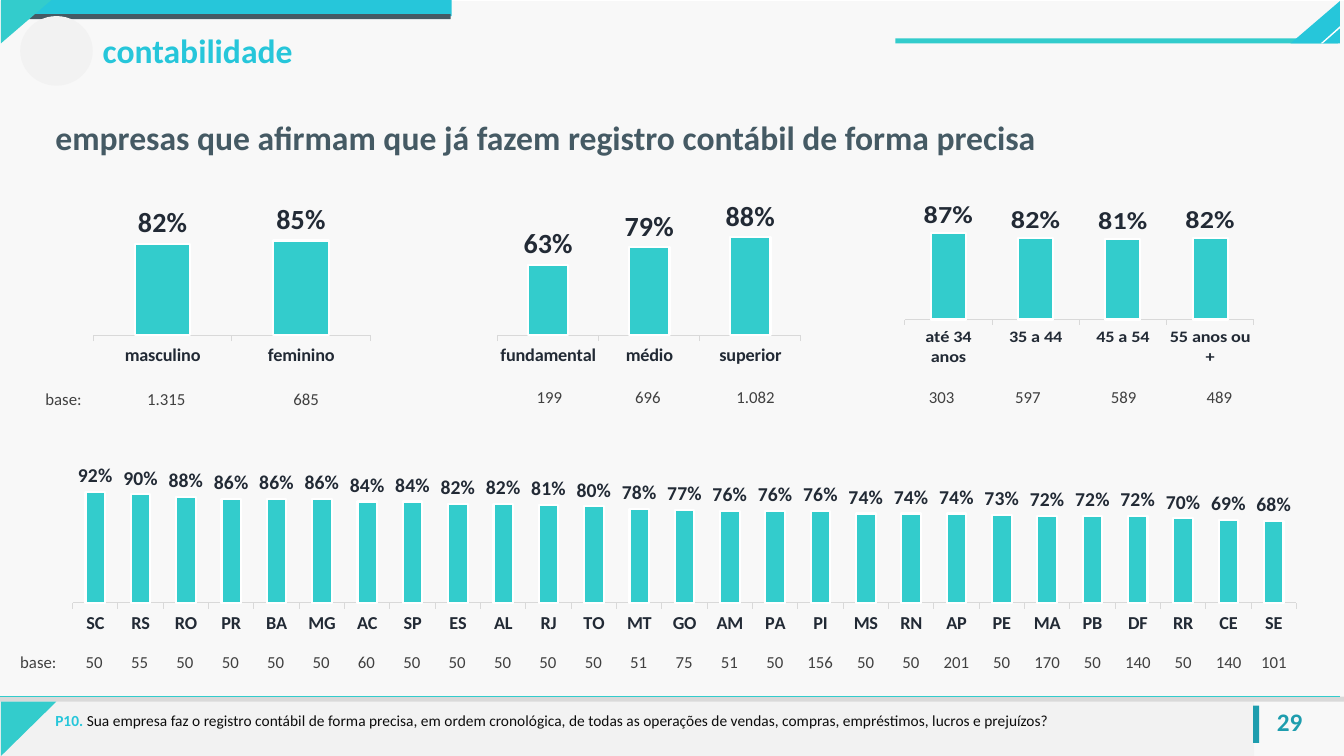
from dataclasses import dataclass

from lxml import etree
from pptx import Presentation
from pptx import util as u
from pptx.chart import data as chart_data
from pptx.dml import color
from pptx.enum import chart as charts
from pptx.enum import dml, shapes, text
from pptx.oxml import ns


@dataclass(frozen=True)
class Theme:
    font: str = "Calibri"
    teal: str = "33CCCC"
    cyan: str = "26C6DA"
    deep_cyan: str = "1E9DAE"
    slate: str = "455A64"
    ink: str = "222A35"
    body: str = "404040"
    black: str = "0D0D0D"
    rule: str = "D9D9D9"
    panel: str = "F2F2F2"
    paper: str = "F8F8F8"
    white: str = "FFFFFF"
    heading_size: int = 24
    number_size: int = 18
    value_size: int = 20
    state_value_size: int = 14
    axis_size: int = 13
    base_size: int = 12
    note_size: int = 11


@dataclass(frozen=True)
class Breakdown:
    categories: list
    percents: list
    bases: list
    widths: list
    base_offset: tuple
    left_aligned: bool = False
    shifted_cell: int = 0


THEME = Theme()
NO_GRID_STYLE = "{2D5ABB26-0587-4C30-8999-92F81FD0307C}"

GENDER = Breakdown(["masculino", "feminino"], [82, 85], ["base:", "1.315", "685"],
                   [0.82, 1.64, 0.64], (-0.47, 1.77), True, 1)
SCHOOLING = Breakdown(["fundamental", "médio", "superior"], [63, 79, 88],
                      ["199", "696", "1.082"], [1.07] * 3, (0, 1.75))
AGE = Breakdown(["até 34 anos", "35 a 44", "45 a 54", "55 anos ou +"], [87, 82, 81, 82],
                ["303", "597", "589", "489"], [0.95] * 4, (-0.07, 1.75))
STATES = [
    ("SC", 92, 50), ("RS", 90, 55), ("RO", 88, 50), ("PR", 86, 50), ("BA", 86, 50),
    ("MG", 86, 50), ("AC", 84, 60), ("SP", 84, 50), ("ES", 82, 50), ("AL", 82, 50),
    ("RJ", 81, 50), ("TO", 80, 50), ("MT", 78, 51), ("GO", 77, 75), ("AM", 76, 51),
    ("PA", 76, 50), ("PI", 76, 156), ("MS", 74, 50), ("RN", 74, 50), ("AP", 74, 201),
    ("PE", 73, 50), ("MA", 72, 170), ("PB", 72, 50), ("DF", 72, 140), ("RR", 70, 50),
    ("CE", 69, 140), ("SE", 68, 101),
]


def rgb(value):
    return color.RGBColor.from_string(value)


def inches(box):
    return [u.Inches(length) for length in box]


def style_font(font, size, shade, bold=False):
    font.name = THEME.font
    font.size = u.Pt(size)
    font.bold = bold
    font.color.rgb = rgb(shade)


def paint(shape, fill):
    shape.shadow.inherit = False
    shape.fill.solid()
    shape.fill.fore_color.rgb = rgb(fill)
    shape.line.fill.background()


def add_block(page, box, fill, kind=shapes.MSO_SHAPE.RECTANGLE):
    block = page.shapes.add_shape(kind, *inches(box))
    paint(block, fill)
    return block


def add_outline(page, points, fill):
    corners = [inches(point) for point in points]
    builder = page.shapes.build_freeform(*corners[0], scale=1.0)
    builder.add_line_segments(corners[1:], close=True)
    paint(builder.convert_to_shape(), fill)


def add_label(page, box, pieces, wrap=True, align=text.PP_ALIGN.LEFT):
    label = page.shapes.add_textbox(*inches(box))
    label.text_frame.word_wrap = wrap
    para = label.text_frame.paragraphs[0]
    para.alignment = align
    for wording, size, shade, bold in pieces:
        span = para.add_run()
        span.text = wording
        style_font(span.font, size, shade, bold)


def place_plot(chart):
    area = chart._chartSpace.chart.plotArea
    for old in area.findall(ns.qn("c:layout")):
        area.remove(old)
    layout = etree.Element(ns.qn("c:layout"))
    manual = etree.SubElement(layout, ns.qn("c:manualLayout"))
    settings = [("layoutTarget", "inner"), ("xMode", "edge"), ("yMode", "edge"),
                ("x", "0.036"), ("y", "0.167"), ("w", "0.928"), ("h", "0.659")]
    for tag, value in settings:
        etree.SubElement(manual, ns.qn("c:" + tag)).set("val", value)
    area.insert(0, layout)


def add_columns(page, box, categories, percents, label_size, gap=150, overlap=0):
    source = chart_data.CategoryChartData(number_format="0%")
    source.categories = categories
    source.add_series("Series 1", [percent / 100 for percent in percents])
    chart = page.shapes.add_chart(charts.XL_CHART_TYPE.COLUMN_CLUSTERED,
                                  *inches(box), source).chart
    chart.has_title = False
    chart.has_legend = False
    style_font(chart.font, 10, THEME.ink)
    place_plot(chart)

    values = chart.value_axis
    values.minimum_scale, values.maximum_scale = 0, 1
    values.has_major_gridlines = False
    values.visible = False
    axis = chart.category_axis
    axis.major_tick_mark = charts.XL_TICK_MARK.OUTSIDE
    axis.format.line.color.rgb = rgb(THEME.rule)
    axis.format.line.width = u.Pt(0.75)
    style_font(axis.tick_labels.font, THEME.axis_size, THEME.ink, True)

    plot = chart.plots[0]
    plot.vary_by_categories = False
    plot.gap_width, plot.overlap = gap, overlap
    plot.has_data_labels = True
    labels = plot.data_labels
    labels.show_value = True
    labels.number_format, labels.number_format_is_linked = "0%", False
    labels.position = charts.XL_LABEL_POSITION.OUTSIDE_END
    style_font(labels.font, label_size, THEME.ink, True)
    bars = plot.series[0].format
    bars.fill.solid()
    bars.fill.fore_color.rgb = rgb(THEME.teal)
    bars.line.color.rgb = rgb(THEME.white)
    bars.line.width = u.Pt(1.5)


def add_base_row(page, left, top, widths, bases):
    frame = page.shapes.add_table(1, len(bases), *inches((left, top, sum(widths), 0.37)))
    table = frame.table
    table.first_row = table.horz_banding = False
    table._tbl.tblPr.find(ns.qn("a:tableStyleId")).text = NO_GRID_STYLE
    for column, width in zip(table.columns, widths):
        column.width = u.Inches(width)
    cells = list(table.rows[0].cells)
    for cell, base in zip(cells, bases):
        cell.fill.background()
        cell.text_frame.text = base
        para = cell.text_frame.paragraphs[0]
        para.line_spacing = 1.5
        para.alignment = text.PP_ALIGN.CENTER
        style_font(para.runs[0].font, THEME.base_size, THEME.body)
    return cells


def breakdown_panel(page, box, group):
    add_columns(page, box, group.categories, group.percents, THEME.value_size)
    dx, dy = group.base_offset
    cells = add_base_row(page, box[0] + dx, box[1] + dy, group.widths, group.bases)
    cells[group.shifted_cell].margin_left = u.Inches(0.29)
    if group.left_aligned:
        for cell in cells:
            cell.text_frame.paragraphs[0].alignment = text.PP_ALIGN.LEFT


def states_panel(page, box):
    names, percents, bases = zip(*STATES)
    add_columns(page, box, names, percents, THEME.state_value_size, 132, 97)
    cells = add_base_row(page, box[0] - 0.15, box[1] + 1.84, [0.61] + [0.45] * len(bases),
                         ["base:"] + [str(base) for base in bases])
    cells[0].text_frame.paragraphs[0].alignment = text.PP_ALIGN.LEFT
    for cell in cells[1:]:
        cell.vertical_anchor = text.MSO_ANCHOR.MIDDLE
        cell.margin_left = cell.margin_right = cell.margin_top = u.Inches(0.01)
        cell.margin_bottom = 0


def header(page, box):
    x, y, width, _ = box
    right = x + width - 0.04
    add_block(page, (x + 0.09, y, 4.39, 0.16), THEME.cyan)
    add_block(page, (x + 0.23, y + 0.14, 4.24, 0.05), THEME.slate)
    add_outline(page, [(x + 0.01, y), (x + 0.51, y), (x + 0.01, y + 0.43)], THEME.teal)
    add_block(page, (right - 4.41, y + 0.38, 4.39, 0.05), THEME.teal)
    add_outline(page, [(right, y + 0.01), (right - 0.49, y + 0.43), (right, y + 0.43)],
                THEME.cyan)
    add_outline(page, [(right, y + 0.28), (right, y + 0.26), (right - 0.19, y + 0.43),
                       (right - 0.17, y + 0.43)], THEME.white)
    add_block(page, (x + 0.2, y + 0.16, 0.72, 0.69), THEME.panel, shapes.MSO_SHAPE.OVAL)
    add_label(page, (x + 0.92, y + 0.25, 5.83, 0.5),
              [("contabilidade", THEME.heading_size, THEME.cyan, True)])


def heading(page, box):
    title = page.shapes.title
    title.left, title.top, title.width, title.height = inches(box)
    frame = title.text_frame
    frame.text = "empresas que afirmam que já fazem registro contábil de forma precisa"
    frame.auto_size = text.MSO_AUTO_SIZE.NONE
    frame.vertical_anchor = text.MSO_ANCHOR.TOP
    para = frame.paragraphs[0]
    para.alignment = text.PP_ALIGN.LEFT
    style_font(para.runs[0].font, THEME.heading_size, THEME.slate, True)


def footer(page, box):
    x, y, width, _ = box
    top, bottom = y + 0.05, y + 0.59
    add_block(page, (x, top, 12.44, 0.54), THEME.panel)
    add_block(page, (x, y, width, 0.05), THEME.rule)
    add_outline(page, [(x + 0.01, top), (x + 0.56, top), (x + 0.01, bottom)], THEME.teal)
    rule = page.shapes.add_connector(shapes.MSO_CONNECTOR.STRAIGHT,
                                     *inches((x, y, x + width - 0.04, y)))
    rule.line.color.rgb = rgb(THEME.teal)
    rule.line.width = u.Pt(0.5)
    etree.SubElement(rule._element.spPr, ns.qn("a:effectLst"))
    add_label(page, (x + 12.48, top, 0.62, 0.4),
              [("29", THEME.number_size, THEME.deep_cyan, True)], False, text.PP_ALIGN.CENTER)
    add_block(page, (x + 12.43, y + 0.09, 0.06, 0.37), THEME.deep_cyan)
    question = ("Sua empresa faz o registro contábil de forma precisa, em ordem cronológica, "
                "de todas as operações de vendas, compras, empréstimos, lucros e prejuízos?")
    add_label(page, (x + 0.45, y + 0.1, 12.01, 0.29),
              [("P10. ", THEME.note_size, THEME.cyan, True),
               (question, THEME.note_size, THEME.black, False)])


def backdrop(page, box):
    paper = add_block(page, box, THEME.paper)
    paper.fill.patterned()
    paper.fill.pattern = dml.MSO_PATTERN.DARK_HORIZONTAL
    paper.fill.fore_color.rgb = rgb(THEME.paper)
    paper.fill.back_color.rgb = rgb(THEME.white)
    page.shapes._spTree.insert(2, paper._element)


def main():
    deck = Presentation()
    deck.slide_width, deck.slide_height = inches((13.33, 7.5))
    page = deck.slides.add_slide(deck.slide_layouts[5])
    backdrop(page, (0, 0, 13.33, 7.5))
    header(page, (0, 0, 13.33, 0.85))
    footer(page, (0, 6.91, 13.33, 0.59))
    heading(page, (0.45, 1.11, 12.23, 0.5))
    breakdown_panel(page, (0.82, 1.94, 2.96, 1.7), GENDER)
    breakdown_panel(page, (4.82, 1.94, 3.24, 1.7), SCHOOLING)
    breakdown_panel(page, (8.84, 1.94, 3.73, 1.7), AGE)
    states_panel(page, (0.25, 4.48, 13.08, 1.82))
    deck.save("out.pptx")


if __name__ == "__main__":
    main()
